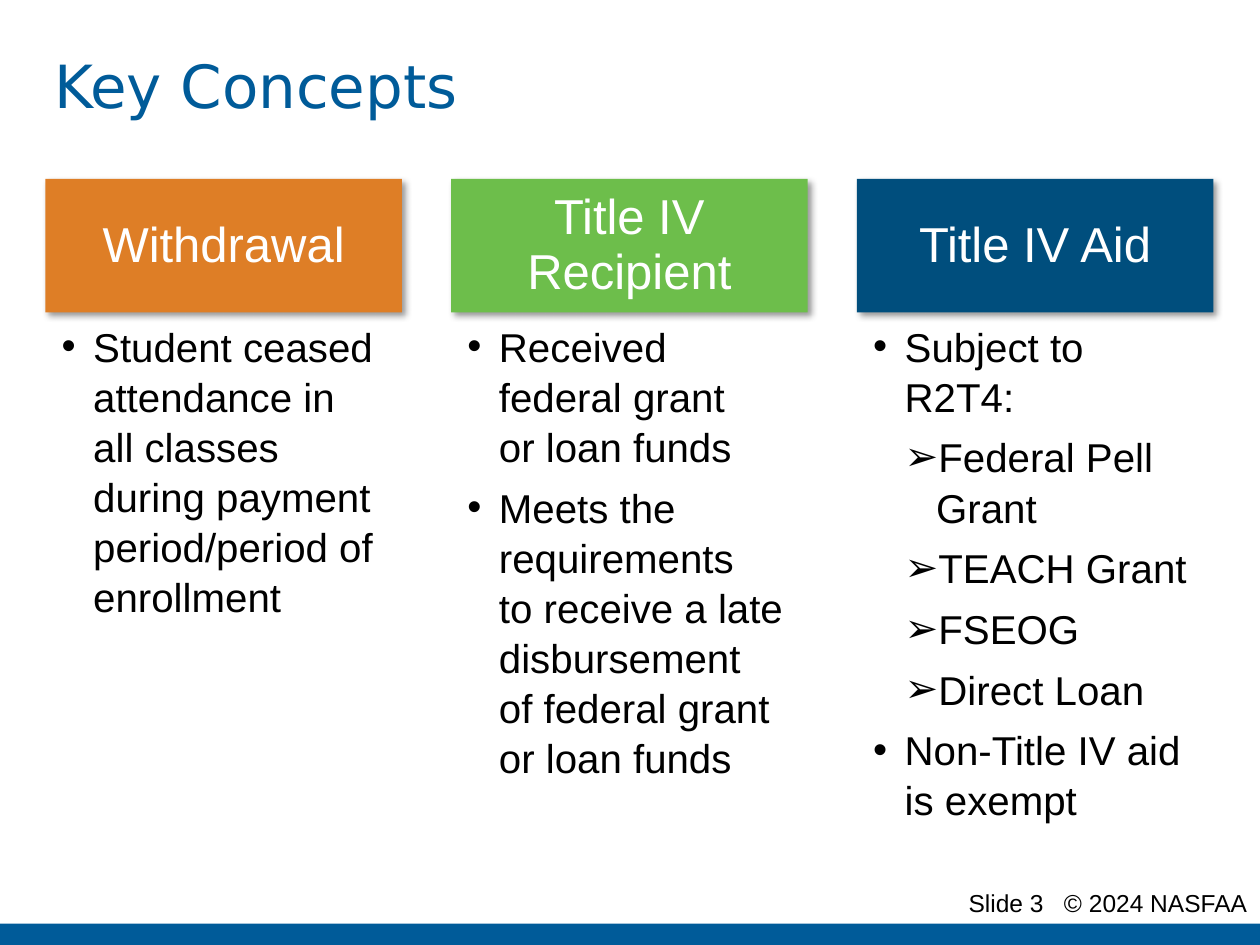
from lxml.etree import SubElement
from pptx import Presentation
from pptx.dml.color import RGBColor
from pptx.enum.shapes import MSO_SHAPE
from pptx.enum.text import MSO_ANCHOR, MSO_AUTO_SIZE, PP_ALIGN
from pptx.oxml.ns import qn
from pptx.util import Inches, Pt

BULLETS = "•➢"
COLUMNS = [
    ("Withdrawal", "DE7E26", [
        (0, "Student ceased attendance in all classes during payment "
            "period/period of enrollment")]),
    ("Title IV Recipient", "6DBE4B", [
        (0, "Received federal grant\vor loan funds"),
        (0, "Meets the requirements\vto receive a late disbursement "
            "of federal grant or loan funds")]),
    ("Title IV Aid", "004E7D", [
        (0, "Subject to R2T4:"),
        (1, "Federal Pell Grant"),
        (1, "TEACH Grant"),
        (1, "FSEOG"),
        (1, "Direct Loan"),
        (0, "Non-Title IV aid is exempt")]),
]


def color(code):
    return RGBColor.from_string(code)


class Deck:
    font, head = "Arial", "DejaVu Sans"
    blue, black, white = "005B99", "000000", "FFFFFF"
    left, pitch, width = 0.36, 3.22, 2.83

    def __init__(self):
        self.prs = Presentation()
        self.prs.slide_width, self.prs.slide_height = Inches(10), Inches(7.5)
        self.slide = self.prs.slides.add_slide(self.prs.slide_layouts[4])
        self.slots = {p.placeholder_format.idx: p
                      for p in self.slide.placeholders}

    def cell(self, col, top, height):
        """Box of one grid column, in EMU."""
        return [Inches(n) for n in
                (self.left + col * self.pitch, top, self.width, height)]

    def place(self, shape, box):
        shape.left, shape.top, shape.width, shape.height = box

    def frame(self, shape, anchor, insets=(0.1, 0.05, 0.1, 0.05)):
        frame = shape.text_frame
        frame.word_wrap = True
        frame.auto_size = MSO_AUTO_SIZE.NONE
        frame.vertical_anchor = anchor
        (frame.margin_left, frame.margin_top, frame.margin_right,
         frame.margin_bottom) = [Inches(n) for n in insets]
        return frame

    def style(self, par, size, code, align=PP_ALIGN.LEFT, font=font):
        par.alignment = align
        for run in par.runs:
            run.font.name, run.font.size = font, Pt(size)
            run.font.bold = False
            run.font.color.rgb = color(code)

    def title(self, text):
        shape = self.slots[0]
        self.place(shape, [Inches(n) for n in (0.33, 0.17, 9.3, 1)])
        frame = self.frame(shape, MSO_ANCHOR.MIDDLE)
        frame.text = text
        self.style(frame.paragraphs[0], 34, self.blue, font=self.head)

    def rect(self, box, code):
        shape = self.slide.shapes.add_shape(MSO_SHAPE.RECTANGLE, *box)
        shape.shadow.inherit = False
        shape.fill.solid()
        shape.fill.fore_color.rgb = color(code)
        shape.line.fill.background()
        return shape

    def shade(self, shape):
        """Soft shadow to the lower right."""
        effects = shape._element.spPr.find(qn("a:effectLst"))
        outer = SubElement(effects, qn("a:outerShdw"), blurRad=str(Pt(4)),
                           dist=str(Pt(3)), dir="2700000", rotWithShape="0")
        tint = SubElement(outer, qn("a:srgbClr"), val=self.black)
        SubElement(tint, qn("a:alpha"), val="40000")

    def header(self, col, text, code):
        shape = self.rect(self.cell(col, 1.42, 1.06), code)
        self.shade(shape)
        frame = self.frame(shape, MSO_ANCHOR.MIDDLE, (0.22, 0.12, 0.22, 0.12))
        frame.text = text
        par = frame.paragraphs[0]
        par.line_spacing = 0.94
        self.style(par, 28, self.white, PP_ALIGN.CENTER)

    def bullet(self, par, level):
        par.level = level
        props = par._p.get_or_add_pPr()
        props.set("marL", str(Inches(0.25 * (level + 1))))
        props.set("indent", str(-Inches(0.25)))
        SubElement(props, qn("a:buChar"), char=BULLETS[level])

    def points(self, col, slot, items):
        shape = self.slots[slot]
        self.place(shape, self.cell(col, 2.41, 4.06))
        frame = self.frame(shape, MSO_ANCHOR.TOP, (0.13, 0.13, 0.18, 0.2))
        for i, (level, text) in enumerate(items):
            par = frame.add_paragraph() if i else frame.paragraphs[0]
            par.text = text
            self.bullet(par, level)
            par.line_spacing = 1.04
            par.space_before, par.space_after = Pt(0), Pt(6)
            self.style(par, 23, self.black)

    def footer(self, text):
        self.rect([Inches(n) for n in (0, 7.33, 10, 0.2)], self.blue)
        box = self.slide.shapes.add_textbox(
            *[Inches(n) for n in (7, 7, 3, 0.25)])
        frame = self.frame(box, MSO_ANCHOR.TOP)
        frame.text = text
        self.style(frame.paragraphs[0], 14, self.black, PP_ALIGN.RIGHT)

    def drop(self, slot):
        node = self.slots[slot]._element
        node.getparent().remove(node)


def main():
    deck = Deck()
    deck.title("Key Concepts")
    for col, (name, code, items) in enumerate(COLUMNS):
        deck.header(col, name, code)
        deck.points(col, (1, 2, 4)[col], items)
    deck.drop(3)
    deck.footer("Slide 3 \u00a0 © 2024 NASFAA".replace("\u00a0", " "))
    deck.prs.save("out.pptx")


if __name__ == "__main__":
    main()
